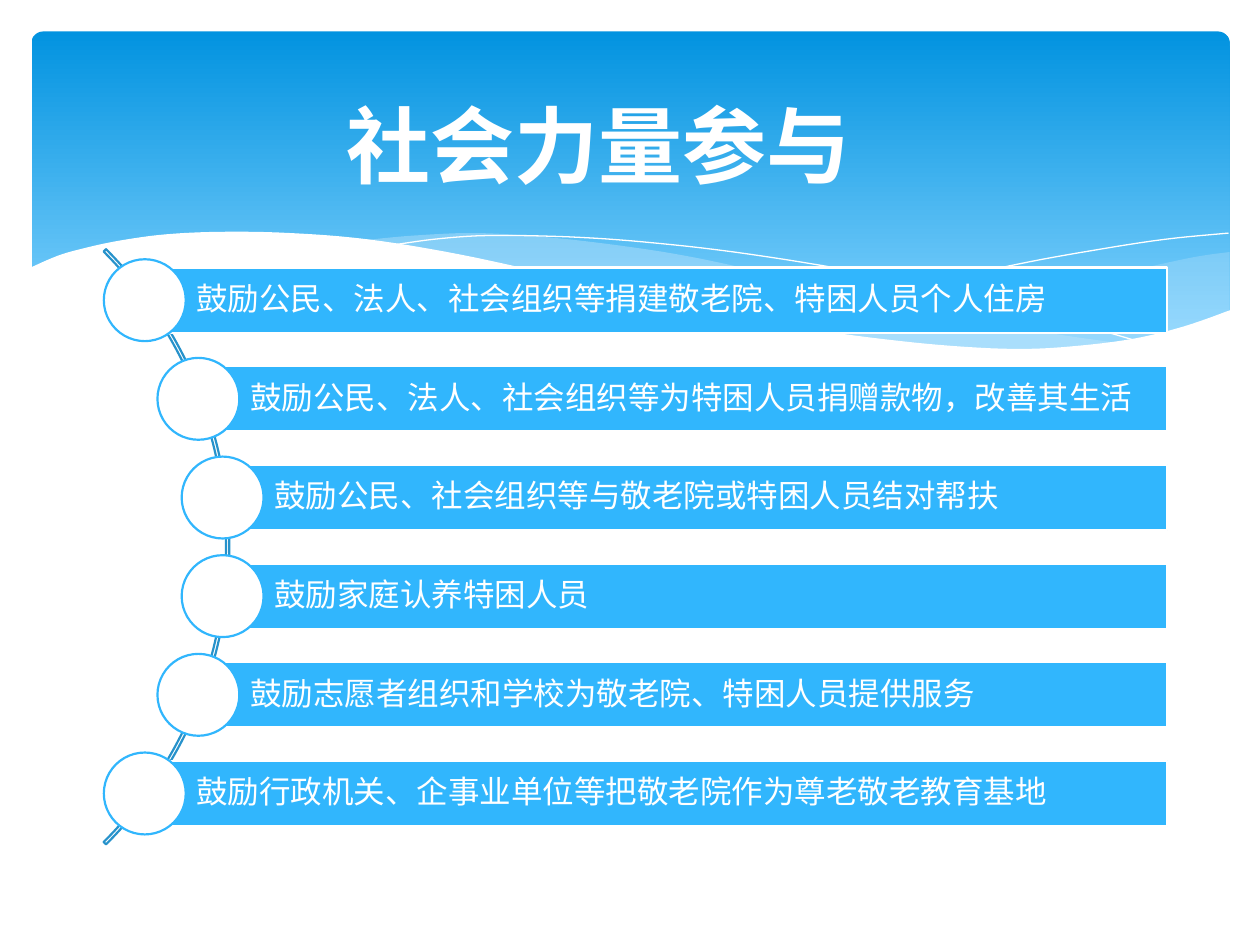
from dataclasses import dataclass
from math import sqrt
from typing import Optional

from lxml.etree import SubElement
from pptx import Presentation
from pptx.dml.color import RGBColor
from pptx.enum.shapes import MSO_SHAPE
from pptx.enum.text import MSO_ANCHOR, PP_ALIGN
from pptx.oxml.ns import qn
from pptx.util import Inches, Pt

CELL = Inches(0.1)
COLS, ROWS = 100, 75
Point = tuple[float, float]


@dataclass(frozen=True)
class Theme:
    white: str = "FFFFFF"
    bar: str = "31B6FD"
    arc: str = "2792CB"
    wave: str = "C6E7FC"
    sky_top: str = "0293E0"
    sky_bottom: str = "83D3FE"
    font: str = "Calibri"
    title_size: float = 48
    body_size: float = 18
    line: float = 1.25


@dataclass(frozen=True)
class Box:
    col: float
    row: float
    cols: float
    rows: float

    def emu(self) -> list[int]:
        return [grid(v) for v in (self.col, self.row, self.cols, self.rows)]


@dataclass(frozen=True)
class Wave:
    curves: list[list[Point]]
    fill: Optional[str] = None
    opacity: int = 100
    line: Optional[str] = None


T = Theme()

WAVES = [
    Wave([[(97.6, 20), (94.8, 20.4), (90.6, 21.3), (86.1, 22.3), (77.9, 24.2),
           (70.6, 25.7), (66.1, 26.5)],
          [(66.1, 26.5), (70.5, 27.1), (74.5, 27.5), (80.3, 27.8), (85.4, 27.6),
           (89.7, 27), (93.5, 26.2), (97.6, 24.7)]], T.wave, 29),
    Wave([[(89.3, 27.3), (83.7, 26.5), (77.5, 25.4), (70.6, 24), (62.9, 22.2),
           (56.9, 20.8), (51.4, 19.8), (44.2, 18.9), (38, 18.5), (32.8, 18.7), (28.6, 19.1)],
          [(28.6, 19.1), (34.2, 19.9), (40.4, 21.1), (44.9, 22.2), (53, 24),
           (60.1, 25.5), (66.5, 26.6), (72.2, 27.4), (77.3, 27.7), (81.8, 27.8),
           (85.7, 27.7), (89.3, 27.3)]], T.wave, 40),
    Wave([[(30.9, 19.5), (34.4, 19), (38.7, 18.7), (45, 18.8), (51, 19.2), (58.2, 20),
           (66.5, 21.3), (72.7, 22.6), (79.5, 24.1), (86.9, 26.1), (90.7, 27.2)]], line=T.white),
    Wave([[(61.3, 25.7), (65.3, 24.6), (72, 22.9), (80.6, 21), (86.6, 19.9),
           (92.4, 19), (97.5, 18.5)]], line=T.white),
    Wave([[(97.7, 24.6), (94, 25.9), (89.9, 26.9), (85, 27.5), (80.9, 27.7),
           (76.1, 27.5), (70.8, 27), (64.8, 26.2), (57.9, 25), (50.3, 23.3),
           (44.7, 22), (36.5, 20.2), (29.2, 19), (23, 18.5), (17.7, 18.4),
           (13.2, 18.6), (9.5, 19.1), (6.7, 19.7), (4.6, 20.3), (2.3, 21.3)],
          [(2.3, 32.9), (97.7, 32.9)]], T.white),
]

ITEMS = [
    "鼓励公民、法人、社会组织等捐建敬老院、特困人员个人住房",
    "鼓励公民、法人、社会组织等为特困人员捐赠款物，改善其生活",
    "鼓励公民、社会组织等与敬老院或特困人员结对帮扶",
    "鼓励家庭认养特困人员",
    "鼓励志愿者组织和学校为敬老院、特困人员提供服务",
    "鼓励行政机关、企事业单位等把敬老院作为尊老敬老教育基地",
]

ARC_X, ARC_Y, ARC_R = -15.2, 43.4, 33.4
ORBIT = 33.1
STEP, BAR_H, DISC, BAR_END = 7.83, 5.2, 6.5, 92.65


def grid(v: float) -> int:
    return round(v * CELL)


def smooth(pts: list[Point], steps: int = 6) -> list[Point]:
    if len(pts) < 3:
        return pts
    padded = [pts[0], *pts, pts[-1]]
    out = [pts[0]]
    for a, b, c, d in zip(padded, padded[1:], padded[2:], padded[3:]):
        for t in (i / steps for i in range(1, steps + 1)):
            out.append(tuple(
                (2 * q + (r - p) * t + (2 * p - 5 * q + 4 * r - s) * t**2
                 + (3 * q - p - 3 * r + s) * t**3) / 2
                for p, q, r, s in zip(a, b, c, d)))
    return out


def style(sp, fill: Optional[str], line: Optional[str] = None, width: float = T.line) -> None:
    sp.shadow.inherit = False
    for fmt, color in ((sp.fill, fill), (sp.line.fill, line)):
        if color is None:
            fmt.background()
        else:
            fmt.solid()
            fmt.fore_color.rgb = RGBColor.from_string(color)
    if line:
        sp.line.width = Pt(width)


def add_shape(s, kind: MSO_SHAPE, box: Box, fill: Optional[str],
              line: Optional[str] = None, adj: tuple = ()):
    sp = s.shapes.add_shape(kind, *box.emu())
    for i, value in enumerate(adj):
        sp.adjustments[i] = value
    style(sp, fill, line)
    return sp


def add_wave(s, wave: Wave) -> None:
    pts = [(grid(x), grid(y)) for curve in wave.curves for x, y in smooth(curve)]
    fb = s.shapes.build_freeform(*pts[0])
    fb.add_line_segments(pts[1:], close=wave.fill is not None)
    sp = fb.convert_to_shape()
    style(sp, wave.fill, wave.line, 0)
    if wave.opacity < 100:
        clr = sp.fill._xPr.find(qn("a:solidFill"))[0]
        SubElement(clr, qn("a:alpha")).set("val", str(wave.opacity * 1000))


def write(sp, text: str, size: float, align: PP_ALIGN, frame: dict,
          bold: bool = False, spacing: float = 1.0) -> None:
    tf = sp.text_frame
    for name, value in {"word_wrap": True, "vertical_anchor": MSO_ANCHOR.MIDDLE, **frame}.items():
        setattr(tf, name, value)
    p = tf.paragraphs[0]
    p.alignment, p.line_spacing = align, spacing
    r = p.add_run()
    r.text = text
    for name, value in {"name": T.font, "size": Pt(size), "bold": bold}.items():
        setattr(r.font, name, value)
    r.font.color.rgb = RGBColor.from_string(T.white)


def add_sky(s) -> None:
    sp = add_shape(s, MSO_SHAPE.ROUNDED_RECTANGLE, Box(2.5, 2.5, 95.1, 27), T.sky_top, adj=(0.034,))
    sp.fill.gradient()
    sp.fill.gradient_angle = 270
    for stop, color, pos in zip(sp.fill.gradient_stops, (T.sky_top, T.sky_bottom), (0, 0.9)):
        stop.color.rgb = RGBColor.from_string(color)
        stop.position = pos


def add_item(s, i: int, text: str) -> None:
    dy = (i - (len(ITEMS) - 1) / 2) * STEP
    x, y = ARC_X + sqrt(ORBIT**2 - dy**2), ARC_Y + dy
    bar = add_shape(s, MSO_SHAPE.RECTANGLE, Box(x, y - BAR_H / 2, BAR_END - x, BAR_H), T.bar, T.white)
    pad = grid(0.5)
    write(bar, text, T.body_size, PP_ALIGN.LEFT, spacing=0.9,
          frame={"margin_left": grid(4.1), "margin_right": pad,
                 "margin_top": pad, "margin_bottom": pad})
    add_shape(s, MSO_SHAPE.OVAL, Box(x - DISC / 2, y - DISC / 2, DISC, DISC), T.white, T.bar)


def main() -> None:
    prs = Presentation()
    prs.slide_width, prs.slide_height = grid(COLS), grid(ROWS)
    s = prs.slides.add_slide(prs.slide_layouts[6])
    add_sky(s)
    for wave in WAVES:
        add_wave(s, wave)
    add_shape(s, MSO_SHAPE.BLOCK_ARC, Box(ARC_X - ARC_R, ARC_Y - ARC_R, 2 * ARC_R, 2 * ARC_R),
              None, T.arc, adj=(189, 27, 0.004))
    for i, text in enumerate(ITEMS):
        add_item(s, i, text)
    title = s.shapes.add_textbox(*Box(9.1, 5.2, 76.8, 12.5).emu())
    write(title, "社会力量参与", T.title_size, PP_ALIGN.CENTER, {}, bold=True)
    prs.save("out.pptx")


if __name__ == "__main__":
    main()
